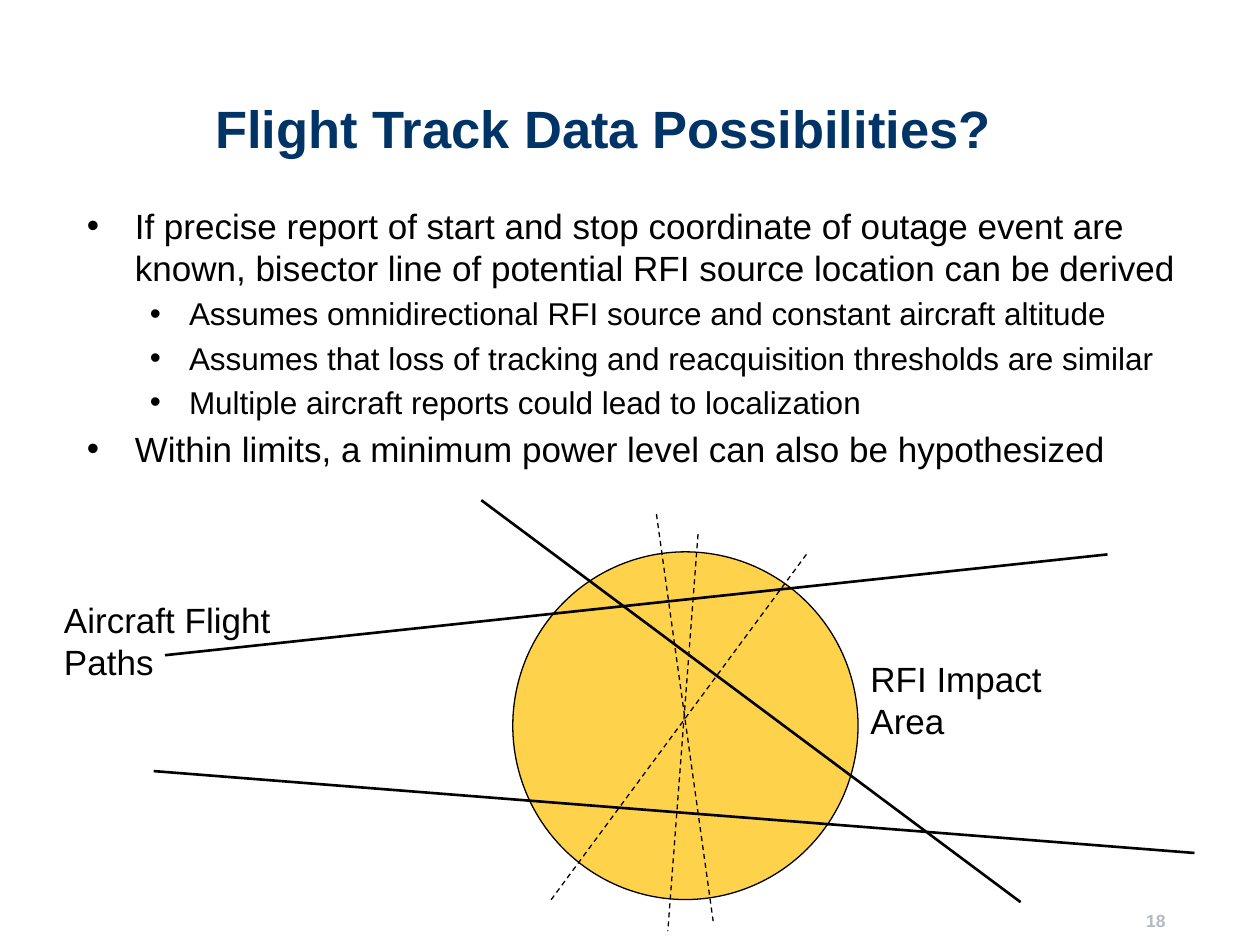
from lxml.etree import SubElement
from pptx import Presentation
from pptx.dml.color import RGBColor
from pptx.enum.dml import MSO_LINE
from pptx.enum.shapes import MSO_CONNECTOR, MSO_SHAPE
from pptx.enum.text import MSO_ANCHOR, MSO_AUTO_SIZE, PP_ALIGN
from pptx.oxml.ns import qn
from pptx.util import Inches, Pt

BLACK = "000000"
LEVEL_FORMATS = [
    {"size": 20, "margin": 0.38, "indent": -0.38},
    {"size": 18, "margin": 0.81, "indent": -0.31},
]
POINTS = [
    (0, "If precise report of start and stop coordinate of outage event are known, "
        "bisector line of potential RFI source location can be derived"),
    (1, "Assumes omnidirectional RFI source and constant aircraft altitude"),
    (1, "Assumes that loss of tracking and reacquisition thresholds are similar"),
    (1, "Multiple aircraft reports could lead to localization"),
    (0, "Within limits, a minimum power level can also be hypothesized"),
]
TRACKS = [
    {"path_line": (1.31, 5.2, 8.79, 4.4), "bisector": (5.21, 4.08, 5.66, 7.31)},
    {"path_line": (3.82, 3.97, 8.1, 7.16), "bisector": (6.4, 4.4, 4.36, 7.16)},
    {"path_line": (1.22, 6.12, 9.48, 6.77), "bisector": (5.54, 4.24, 5.3, 7.39)},
]


def color(hex_value):
    return RGBColor.from_string(hex_value)


def set_attributes(target, values):
    for name, value in values.items():
        setattr(target, name, value)


def place(shape, left, top, width, height):
    set_attributes(shape, {"left": Inches(left), "top": Inches(top),
                           "width": Inches(width), "height": Inches(height)})


def write(paragraph, text, size, font_color=BLACK, bold=False):
    run = paragraph.add_run()
    run.text = text
    set_attributes(run.font, {"name": "Arial", "size": Pt(size), "bold": bold})
    run.font.color.rgb = color(font_color)


def prepare_frame(shape, anchor=MSO_ANCHOR.TOP):
    frame = shape.text_frame
    set_attributes(frame, {"word_wrap": True, "auto_size": MSO_AUTO_SIZE.NONE,
                           "vertical_anchor": anchor})
    return frame


def add_bullet(paragraph, margin, indent):
    properties = paragraph._p.get_or_add_pPr()
    properties.set("marL", str(Inches(margin)))
    properties.set("indent", str(Inches(indent)))
    SubElement(properties, qn("a:buFont")).set("typeface", "Arial")
    SubElement(properties, qn("a:buChar")).set("char", "•")


def fill_title(title):
    place(title, 1.61, 0.71, 6.76, 1.45)
    paragraph = prepare_frame(title).paragraphs[0]
    paragraph.alignment = PP_ALIGN.LEFT
    write(paragraph, "Flight Track Data Possibilities?", 30, "003366", True)


def fill_body(body):
    place(body, 0.59, 1.57, 8.87, 2.56)
    frame = prepare_frame(body)
    for index, (level, text) in enumerate(POINTS):
        paragraph = frame.add_paragraph() if index else frame.paragraphs[0]
        level_format = LEVEL_FORMATS[level]
        size = level_format["size"]
        add_bullet(paragraph, level_format["margin"], level_format["indent"])
        set_attributes(paragraph, {"level": level,
                                   "space_before": Pt(size * 0.2 if index else 0)})
        write(paragraph, text, size)


def add_impact_area(slide):
    circle = slide.shapes.add_shape(MSO_SHAPE.OVAL, Inches(4.07), Inches(4.38),
                                    Inches(2.74), Inches(2.76))
    circle.shadow.inherit = False
    circle.fill.solid()
    circle.fill.fore_color.rgb = color("FFC000")
    fill_color = circle._element.spPr.find(qn("a:solidFill"))[0]
    SubElement(fill_color, qn("a:alpha")).set("val", "70000")
    circle.line.color.rgb = color(BLACK)
    circle.line.width = Pt(0.75)


def add_line(slide, ends, width, dash=None):
    connector = slide.shapes.add_connector(MSO_CONNECTOR.STRAIGHT,
                                           *(Inches(end) for end in ends))
    connector.line.color.rgb = color(BLACK)
    set_attributes(connector.line, {"width": Pt(width), "dash_style": dash})
    SubElement(connector._element.spPr, qn("a:effectLst"))


def add_label(slide, text, left, top):
    label = slide.shapes.add_textbox(Inches(left), Inches(top), Inches(2.17), Inches(0.77))
    write(prepare_frame(label).paragraphs[0], text, 20)


def add_slide_number(slide, number):
    box = slide.shapes.add_textbox(Inches(7.17), Inches(6.94), Inches(2.08), Inches(0.5))
    frame = prepare_frame(box, MSO_ANCHOR.BOTTOM)
    frame.margin_right = 0
    paragraph = frame.paragraphs[0]
    paragraph.alignment = PP_ALIGN.RIGHT
    write(paragraph, number, 10, "B4BAC0", True)


def main():
    presentation = Presentation()
    set_attributes(presentation, {"slide_width": Inches(10), "slide_height": Inches(7.5)})
    slide = presentation.slides.add_slide(presentation.slide_layouts[1])
    fill_title(slide.shapes.title)
    fill_body(slide.placeholders[1])
    add_impact_area(slide)
    add_slide_number(slide, "18")
    for track in TRACKS:
        add_line(slide, track["path_line"], 1.5)
        add_line(slide, track["bisector"], 0.75, MSO_LINE.DASH)
    add_label(slide, "Aircraft Flight Paths", 0.41, 4.7)
    add_label(slide, "RFI Impact Area", 6.81, 5.17)
    presentation.save("out.pptx")


if __name__ == "__main__":
    main()
